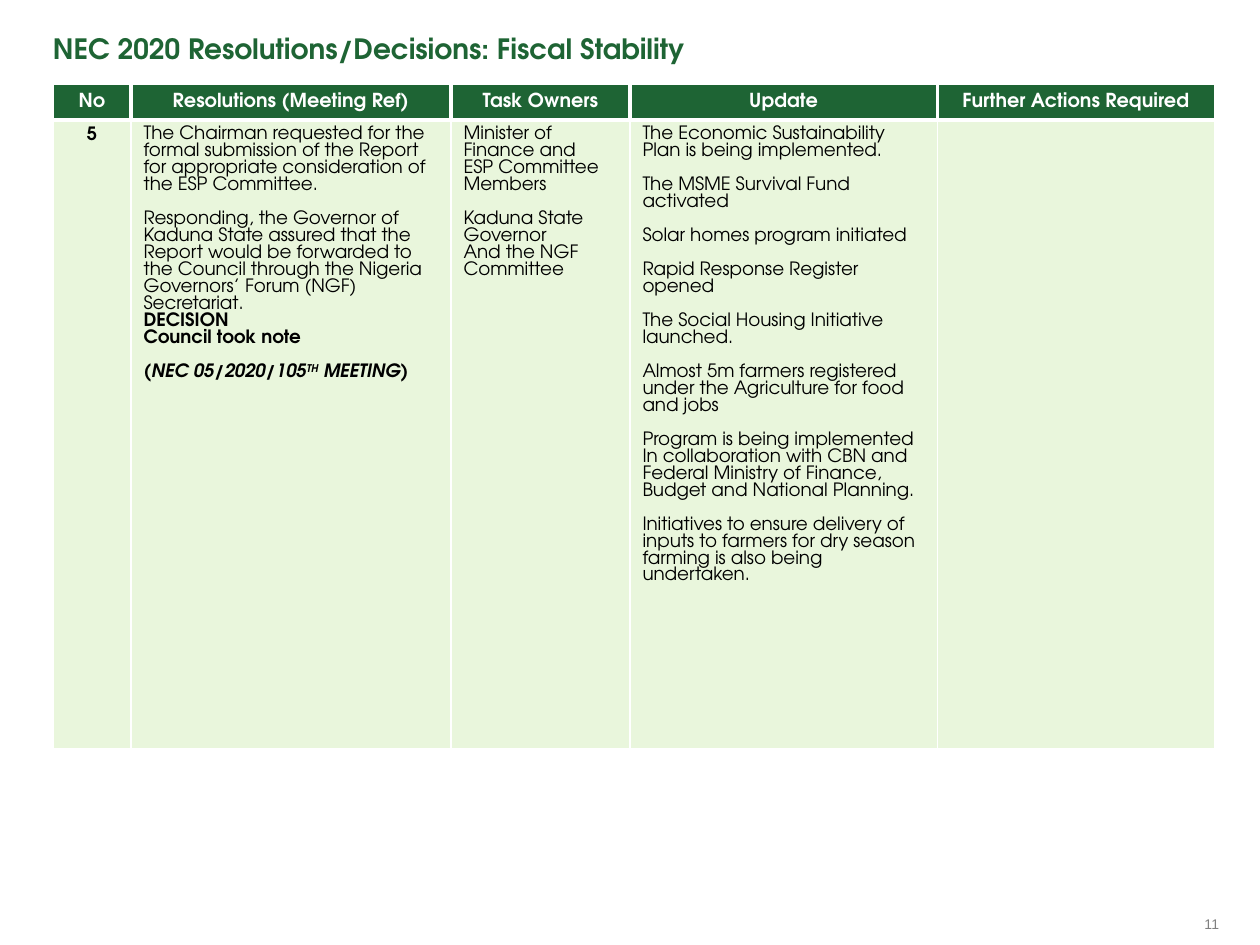
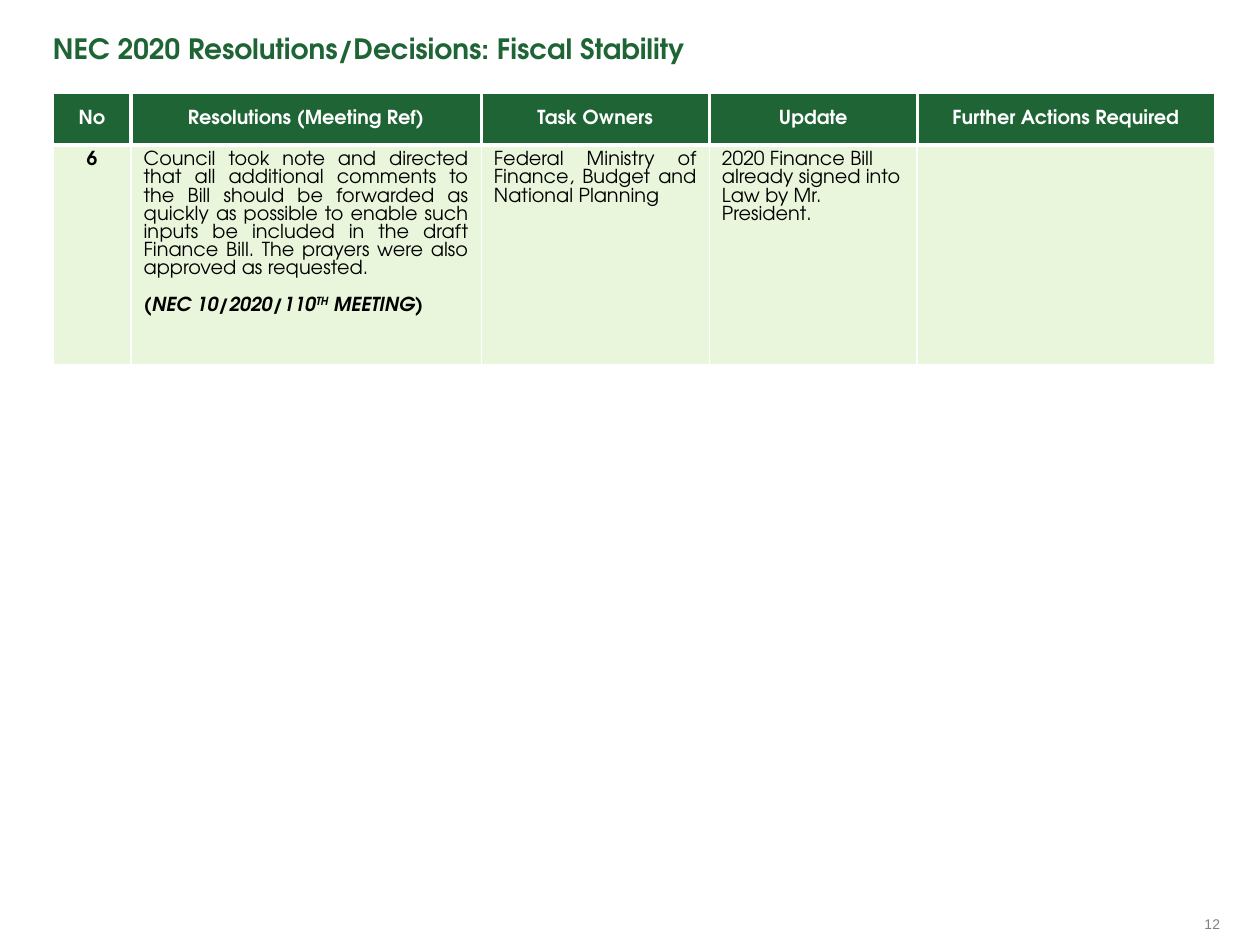
from dataclasses import dataclass

from lxml.etree import SubElement
from pptx import Presentation
from pptx.dml.color import RGBColor
from pptx.enum.text import MSO_ANCHOR, PP_ALIGN
from pptx.oxml.ns import qn
from pptx.util import Inches, Pt


@dataclass(frozen=True)
class Theme:
    green: str = "1E6434"
    pale: str = "E9F6DC"
    white: str = "FFFFFF"
    black: str = "000000"
    grey: str = "808080"
    face: str = "TeX Gyre Adventor"
    number_face: str = "Arial"
    title_size: float = 16
    header_size: float = 11
    number_size: float = 8
    thick: float = 2.25
    thin: float = 1


T = Theme()
TITLE = "NEC 2020 Resolutions/Decisions: Fiscal Stability"
HEADERS = ["No", "Resolutions (Meeting Ref)", "Task Owners", "Update",
           "Further Actions Required"]
LEFT, WIDTH = 0.42, 9.22


def write(p, text, size=11, color=T.black, face=T.face, bold=False,
          italic=False, align=PP_ALIGN.LEFT, leading=None, before=0):
    p.alignment = align
    p.space_before = Pt(before)
    if leading:
        p.line_spacing = Pt(leading)
    for i, part in enumerate(text.split("^")):
        r = p.add_run()
        r.text = part
        r.font.name = face
        r.font.size = Pt(size)
        r.font.bold = bold
        r.font.italic = italic
        r.font.color.rgb = RGBColor.from_string(color)
        if i % 2:
            r._r.get_or_add_rPr().set("baseline", "30000")


def add_label(s, box, text, wrap=True, anchor=MSO_ANCHOR.TOP, **fmt):
    tf = s.shapes.add_textbox(*map(Inches, box)).text_frame
    tf.margin_left = tf.margin_right = tf.margin_top = tf.margin_bottom = 0
    tf.word_wrap = wrap
    tf.vertical_anchor = anchor
    write(tf.paragraphs[0], text, **fmt)


def style_cell(cell, fill, **borders):
    tcPr = cell._tc.get_or_add_tcPr()
    for side in "LRTB":
        if side in borders:
            ln = SubElement(tcPr, qn(f"a:ln{side}"), w=str(Pt(borders[side])))
            color = SubElement(SubElement(ln, qn("a:solidFill")), qn("a:srgbClr"))
            color.set("val", T.white)
    cell.fill.solid()
    cell.fill.fore_color.rgb = RGBColor.from_string(fill)


def cell_borders(col, last, vertical, **horizontal):
    sides = dict(horizontal)
    if col > 0:
        sides["L"] = vertical
    if col < last:
        sides["R"] = vertical
    return sides


def add_resolutions(s, box, widths, header_height, cells, size, leading):
    left, top, width, height = box
    frame = s.shapes.add_table(2, len(HEADERS), *map(Inches, box))
    table = frame.table
    table.horz_banding = False
    table.rows[0].height = Inches(header_height)
    table.rows[1].height = Inches(height - header_height)
    last = len(HEADERS) - 1
    for col, (heading, col_width, paragraphs) in enumerate(zip(HEADERS, widths, cells)):
        table.columns[col].width = Inches(col_width)
        head, body = table.cell(0, col), table.cell(1, col)
        style_cell(head, T.green, **cell_borders(col, last, T.thick, B=T.thick))
        style_cell(body, T.pale,
                   **cell_borders(col, last, T.thin, T=T.thick, B=T.thick))
        head.vertical_anchor = MSO_ANCHOR.MIDDLE
        write(head.text_frame.paragraphs[0], heading, size=T.header_size,
              color=T.white, bold=True, align=PP_ALIGN.CENTER)
        tf = body.text_frame
        for i, (text, fmt) in enumerate(paragraphs):
            p = tf.add_paragraph() if i else tf.paragraphs[0]
            fmt = dict(fmt)
            before = leading if fmt.pop("gap", False) else 0
            write(p, text, size=size, leading=leading, before=before, **fmt)


def add_resolution_slide(prs, number, top, height, **table):
    s = prs.slides.add_slide(prs.slide_layouts[6])
    add_label(s, (9.56, 7.26, 0.14, 0.14), str(number), wrap=False,
              anchor=MSO_ANCHOR.MIDDLE, size=T.number_size, color=T.grey,
              face=T.number_face)
    add_resolutions(s, (LEFT, top, WIDTH, height), **table)
    add_label(s, (LEFT, 0.25, WIDTH, 0.27), TITLE, size=T.title_size,
              color=T.green, bold=True)


def para(text, **fmt):
    return text, fmt


def number_cell(number):
    return [para(str(number), bold=True, align=PP_ALIGN.CENTER)]


def spaced(*texts):
    return [para(text, gap=i > 0) for i, text in enumerate(texts)]


def main():
    prs = Presentation()
    prs.slide_width, prs.slide_height = Inches(10), Inches(7.5)

    add_resolution_slide(
        prs, 11, top=0.67, height=5.28, header_height=0.28,
        widths=[0.62, 2.54, 1.42, 2.44, 2.2], size=10.5, leading=9.7,
        cells=[
            number_cell(5),
            spaced(
                "The Chairman requested for the formal submission of the Report "
                "for appropriate consideration of the ESP Committee.",
                "Responding, the Governor of Kaduna State assured that the Report "
                "would be forwarded to the Council through the Nigeria Governors’ "
                "Forum (NGF) Secretariat.",
            ) + [
                para("DECISION", bold=True),
                para("Council took note", bold=True),
                para("(NEC 05/2020/105^TH^ MEETING)", bold=True, italic=True, gap=True),
            ],
            [
                para("Minister of Finance and"),
                para("ESP Committee Members"),
                para("Kaduna State Governor", gap=True),
                para("And the NGF Committee"),
            ],
            spaced(
                "The Economic Sustainability Plan is being implemented.",
                "The MSME Survival Fund activated",
                "Solar homes program initiated",
                "Rapid Response Register opened",
                "The Social Housing Initiative launched.",
                "Almost 5m farmers registered under the Agriculture for food and jobs",
                "Program is being implemented In collaboration with CBN and Federal "
                "Ministry of Finance, Budget and National Planning.",
                "Initiatives to ensure delivery of inputs to farmers for dry season "
                "farming is also being undertaken.",
            ),
            [],
        ])

    justify = PP_ALIGN.JUSTIFY
    add_resolution_slide(
        prs, 12, top=0.74, height=2.16, header_height=0.41,
        widths=[0.62, 2.78, 1.81, 1.65, 2.36], size=11, leading=10.4,
        cells=[
            number_cell(6),
            [
                para("Council took note and directed that all additional comments to "
                     "the Bill should be forwarded as quickly as possible to enable "
                     "such inputs be included in the draft Finance Bill. The prayers "
                     "were also approved as requested.", align=justify),
                para("(NEC 10/2020/110^TH^ MEETING)", bold=True, italic=True,
                     align=justify, gap=True),
            ],
            [para("Federal Ministry of Finance, Budget and National Planning",
                  align=justify)],
            [para("2020 Finance Bill already signed into Law by Mr. President.")],
            [],
        ])

    prs.save("out.pptx")


if __name__ == "__main__":
    main()
